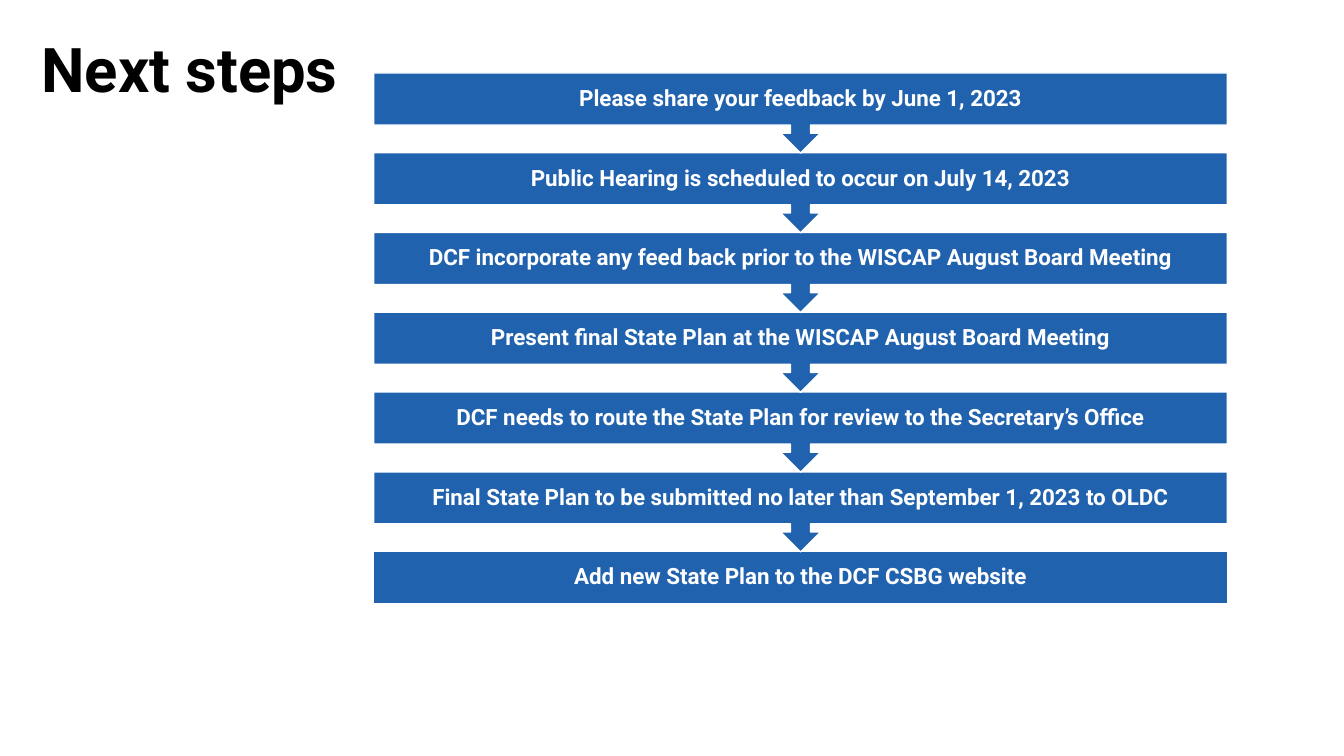
from pptx import Presentation
from pptx.dml.color import RGBColor
from pptx.enum.shapes import MSO_SHAPE as SHAPE
from pptx.enum.text import MSO_ANCHOR as ANCHOR, PP_ALIGN as ALIGN
from pptx.util import Cm, Pt

TITLE = "Next steps"
STEPS = [
    "Please share your feedback by June 1, 2023",
    "Public Hearing is scheduled to occur on July 14, 2023",
    "DCF incorporate any feed back prior to the WISCAP August Board Meeting",
    "Present final State Plan at the WISCAP August Board Meeting",
    "DCF needs to route the State Plan for review to the Secretary’s Office",
    "Final State Plan to be submitted no later than September 1, 2023 to OLDC",
    "Add new State Plan to the DCF CSBG website",
]

BLUE = RGBColor(0x21, 0x62, 0xAE)
WHITE = RGBColor(0xFF, 0xFF, 0xFF)
BLACK = RGBColor(0x00, 0x00, 0x00)
FONT = "Roboto"

LEFT, TOP, WIDTH = 9.42, 1.84, 21.51
PITCH, CALLOUT_H, BAR_H = 2.01, 2.02, 1.31
INSET = 0.3


def write(sp, text, size, color, align, inset=None):
    tf = sp.text_frame
    tf.word_wrap = True
    tf.vertical_anchor = ANCHOR.MIDDLE
    if inset is not None:
        tf.margin_left = tf.margin_right = Cm(inset)
        tf.margin_top = tf.margin_bottom = Cm(inset)
    p = tf.paragraphs[0]
    p.alignment = align
    p.line_spacing = 0.9
    r = p.add_run()
    r.text = text
    r.font.name = FONT
    r.font.size = Pt(size)
    r.font.bold = True
    r.font.color.rgb = color


def add_step(s, index, text):
    last = index == len(STEPS) - 1
    kind = SHAPE.RECTANGLE if last else SHAPE.DOWN_ARROW_CALLOUT
    height = BAR_H if last else CALLOUT_H
    sp = s.shapes.add_shape(kind, Cm(LEFT), Cm(TOP + index * PITCH), Cm(WIDTH), Cm(height))
    sp.shadow.inherit = False
    sp.fill.solid()
    sp.fill.fore_color.rgb = BLUE
    sp.line.color.rgb = WHITE
    sp.line.width = Pt(1)
    write(sp, text, 16, WHITE, ALIGN.CENTER, INSET)


def main():
    prs = Presentation()
    prs.slide_width, prs.slide_height = Cm(33.87), Cm(19.05)
    s = prs.slides.add_slide(prs.slide_layouts[5])

    title = s.shapes.title
    title.left, title.top = Cm(0.79), Cm(0)
    title.width, title.height = Cm(29.21), Cm(3.68)
    write(title, TITLE, 44, BLACK, ALIGN.LEFT)

    for index, text in reversed(list(enumerate(STEPS))):
        add_step(s, index, text)

    prs.save("out.pptx")


if __name__ == "__main__":
    main()
